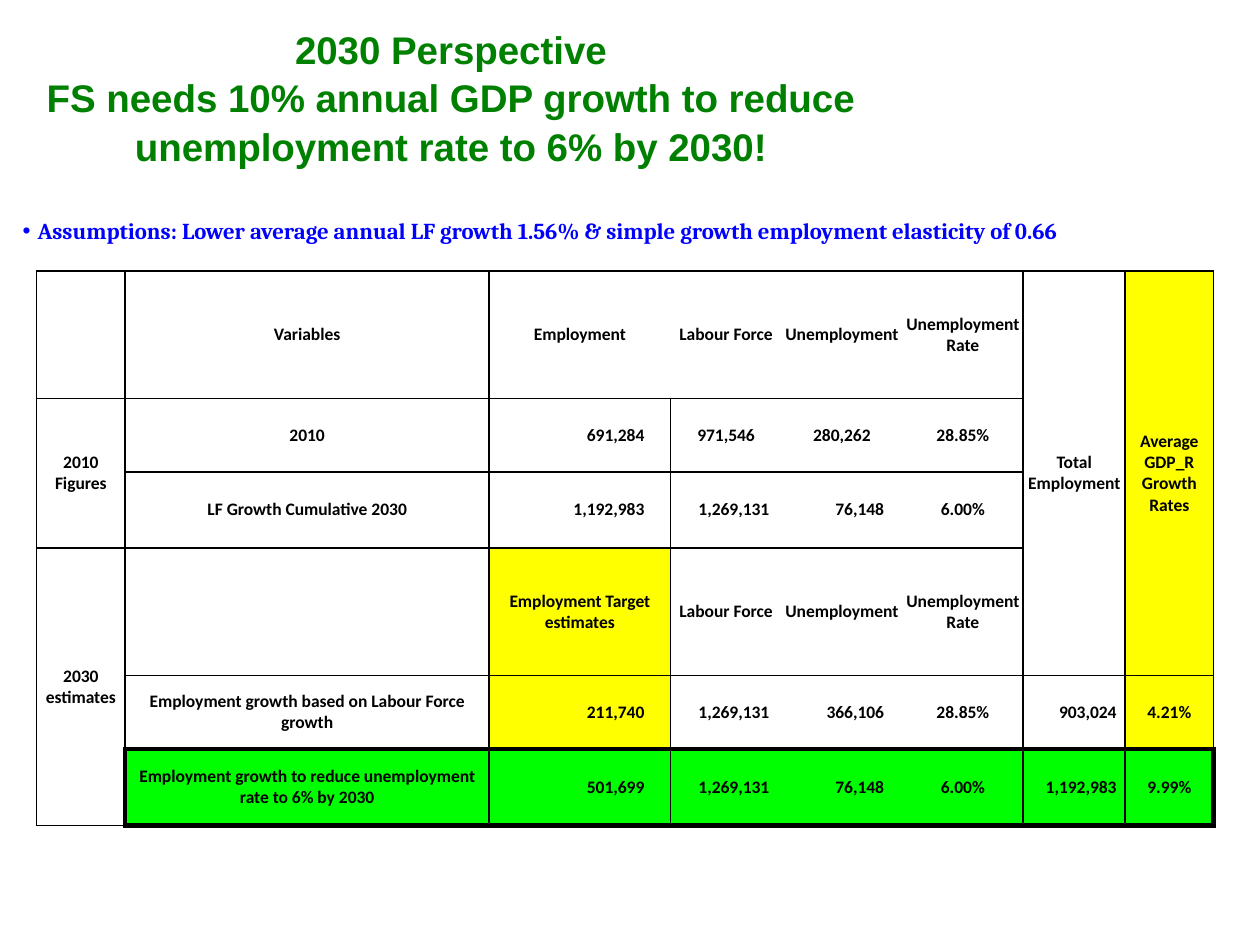
from lxml.etree import SubElement
from pptx import Presentation
from pptx.dml.color import RGBColor
from pptx.enum.text import MSO_ANCHOR, PP_ALIGN
from pptx.oxml.ns import qn
from pptx.util import Pt

BLACK = RGBColor(0, 0, 0)
WHITE = RGBColor(0xFF, 0xFF, 0xFF)
BLUE = RGBColor(0, 0, 0xFF)
TITLE_GREEN = RGBColor(0, 0x80, 0)
YELLOW = RGBColor(0xFF, 0xFF, 0)
LIME = RGBColor(0, 0xFF, 0)

NO_STYLE = "{2D5ABB26-0587-4C30-8999-92F81FD0307C}"
COL_WIDTHS = [50.6, 208, 103.7, 63.4, 69.1, 69.1, 58.3, 50.4]
ROW_HEIGHTS = [72.7, 42, 43.7, 72.7, 42, 43.7]
ROWS = [
    ["", "Variables", "Employment", "Labour Force", "Unemployment",
     "Unemployment Rate", "Total Employment", "Average GDP_R Growth Rates"],
    ["2010 Figures", "2010", "691,284", "971,546", "280,262", "28.85%", "", ""],
    ["", "LF Growth Cumulative 2030", "1,192,983", "1,269,131", "76,148",
     "6.00%", "", ""],
    ["2030 estimates", "", "Employment Target estimates", "Labour Force",
     "Unemployment", "Unemployment Rate", "", ""],
    ["", "Employment growth based on Labour Force growth", "211,740",
     "1,269,131", "366,106", "28.85%", "903,024", "4.21%"],
    ["", "Employment growth to reduce unemployment rate to 6% by 2030",
     "501,699", "1,269,131", "76,148", "6.00%", "1,192,983", "9.99%"],
]
# Areas are first row, first column, last row, last column
MERGED = [(1, 0, 2, 0), (3, 0, 5, 0), (0, 6, 3, 6), (0, 7, 3, 7)]
OUTLINED = MERGED + [
    (0, 0, 0, 0), (0, 1, 0, 5), (1, 1, 2, 1), (1, 2, 2, 5),
    (3, 1, 4, 1), (3, 2, 3, 5), (4, 2, 4, 5), (4, 6, 4, 6), (4, 7, 4, 7),
    (5, 1, 5, 1), (5, 2, 5, 5), (5, 6, 5, 6), (5, 7, 5, 7),
]
HIGHLIGHTED_ROW = (5, 1, 5, 7)
YELLOW_CELLS = {(0, 7), (3, 2), (4, 2), (4, 7)}
# Right inset of the right-aligned figures in each column
FIGURE_INSETS = {2: 15, 3: 7, 4: 10.5, 6: 5}
CENTRED_FIGURES = {(1, 3), (1, 4)}


def add_run(p, text, font, size, color):
    r = p.add_run()
    r.text = text
    r.font.name = font
    r.font.size = Pt(size)
    r.font.bold = True
    r.font.color.rgb = color


def add_text_box(s, left, top, width, height):
    tf = s.shapes.add_textbox(Pt(left), Pt(top), Pt(width), Pt(height)).text_frame
    tf.word_wrap = True
    return tf


def add_title(s):
    tf = add_text_box(s, -5.8, 36, 527, 38.2)
    tf.vertical_anchor = MSO_ANCHOR.MIDDLE
    p = tf.paragraphs[0]
    p.alignment = PP_ALIGN.CENTER
    p.line_spacing = 1.05
    add_run(p, "2030 Perspective", "Arial", 22, TITLE_GREEN)
    p.add_line_break()
    add_run(p, "FS needs 10% annual GDP growth to reduce unemployment rate "
               "to 6% by 2030!", "Arial", 22, TITLE_GREEN)


def add_assumptions(s):
    p = add_text_box(s, 5.8, 120.2, 704.9, 29.5).paragraphs[0]
    p.alignment = PP_ALIGN.JUSTIFY
    pPr = p._p.get_or_add_pPr()
    pPr.set("marL", str(Pt(8.6)))
    pPr.set("indent", str(Pt(-8.6)))
    SubElement(pPr, qn("a:buFont"), typeface="Arial")
    SubElement(pPr, qn("a:buChar"), char="•")
    add_run(p, "Assumptions: Lower average annual LF growth 1.56% & simple "
               "growth employment elasticity of 0.66", "Cambria", 13, BLUE)


def border_widths():
    """Map (row, column, side) to a line width, on both cells of each edge."""
    widths = {}

    def outline(area, width):
        r0, c0, r1, c1 = area
        for c in range(c0, c1 + 1):
            for key in ((r0, c, "T"), (r0 - 1, c, "B"), (r1, c, "B"), (r1 + 1, c, "T")):
                widths[key] = width
        for r in range(r0, r1 + 1):
            for key in ((r, c0, "L"), (r, c0 - 1, "R"), (r, c1, "R"), (r, c1 + 1, "L")):
                widths[key] = width

    for area in OUTLINED:
        outline(area, 1)
    outline(HIGHLIGHTED_ROW, 3)
    for r0, c0, _, _ in MERGED:
        widths[r0, c0, "B"] = 1
    return widths


def add_border(cell, side, width):
    ln = SubElement(cell._tc.get_or_add_tcPr(), qn(f"a:ln{side}"), w=str(Pt(width)))
    fill = SubElement(ln, qn("a:solidFill"))
    SubElement(fill, qn("a:srgbClr"), val=str(BLACK))


def cell_color(row, col):
    if row == 5 and col > 0:
        return LIME
    return YELLOW if (row, col) in YELLOW_CELLS else WHITE


def fill_cell(cell, row, col, text):
    cell.margin_left = cell.margin_right = cell.margin_top = cell.margin_bottom = 0
    cell.vertical_anchor = MSO_ANCHOR.MIDDLE
    cell.fill.solid()
    cell.fill.fore_color.rgb = cell_color(row, col)
    p = cell.text_frame.paragraphs[0]
    p.alignment = PP_ALIGN.CENTER
    if not text:
        return
    is_figure = text.replace(",", "").isdigit()
    if is_figure and col in FIGURE_INSETS and (row, col) not in CENTRED_FIGURES:
        p.alignment = PP_ALIGN.RIGHT
        cell.margin_right = Pt(FIGURE_INSETS[col])
    add_run(p, text, "Calibri", 10, BLACK)


def add_growth_table(s):
    frame = s.shapes.add_table(len(ROWS), len(COL_WIDTHS), Pt(20.9), Pt(154.9),
                               Pt(sum(COL_WIDTHS)), Pt(sum(ROW_HEIGHTS)))
    table = frame.table
    table.first_row = table.horz_banding = False
    table._tbl.tblPr.find(qn("a:tableStyleId")).text = NO_STYLE
    for column, width in zip(table.columns, COL_WIDTHS):
        column.width = Pt(width)
    for row, height in zip(table.rows, ROW_HEIGHTS):
        row.height = Pt(height)
    for r0, c0, r1, c1 in MERGED:
        table.cell(r0, c0).merge(table.cell(r1, c1))
    widths = border_widths()
    for r, texts in enumerate(ROWS):
        for c, text in enumerate(texts):
            cell = table.cell(r, c)
            for side in "LRTB":
                if (r, c, side) in widths:
                    add_border(cell, side, widths[r, c, side])
            fill_cell(cell, r, c, text)


def main():
    prs = Presentation()
    prs.slide_width, prs.slide_height = Pt(720), Pt(540)
    s = prs.slides.add_slide(prs.slide_layouts[6])
    add_assumptions(s)
    add_title(s)
    add_growth_table(s)
    prs.save("out.pptx")


if __name__ == "__main__":
    main()
